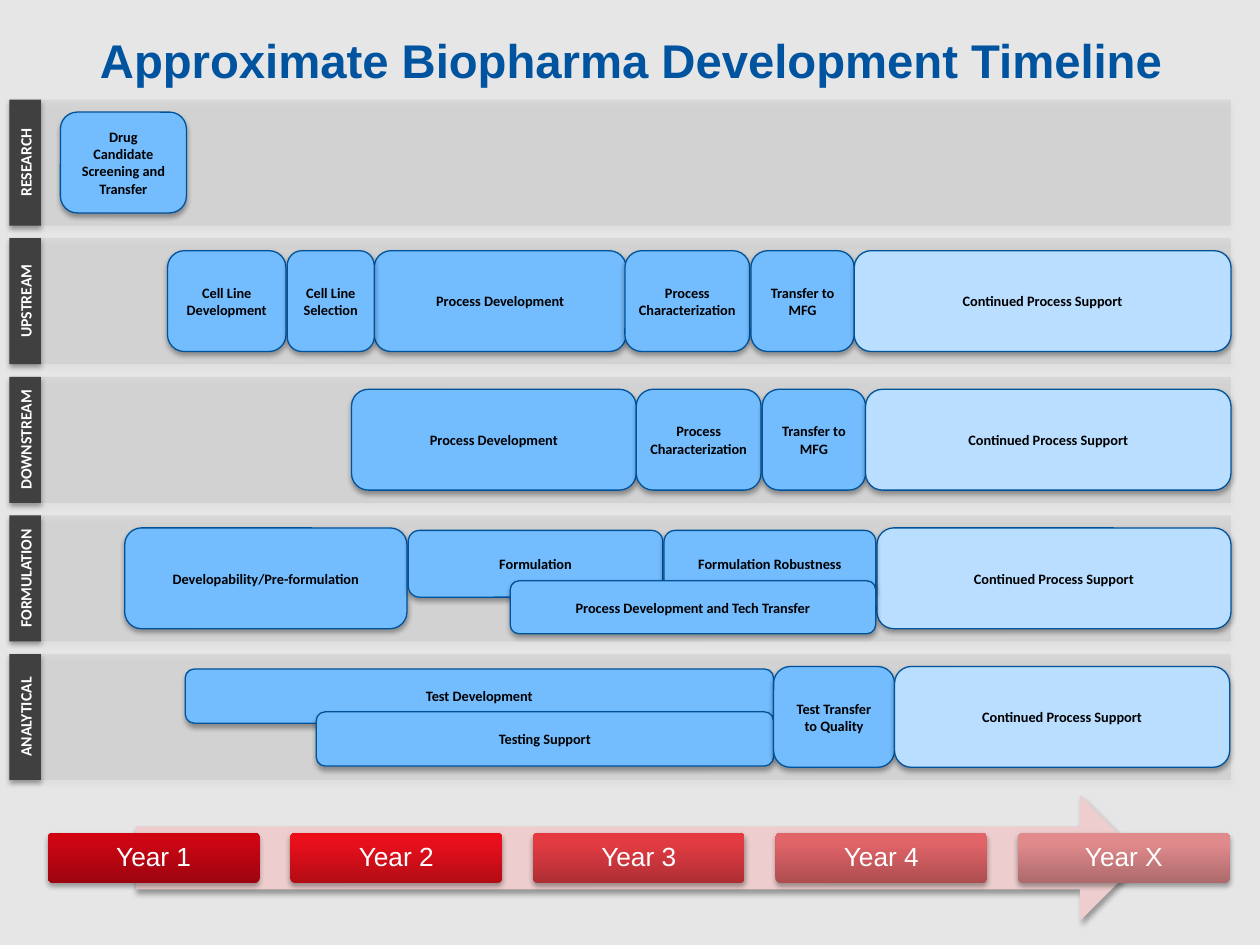
from dataclasses import dataclass
from copy import deepcopy

from pptx import Presentation
from pptx.dml.color import RGBColor
from pptx.enum.shapes import MSO_SHAPE
from pptx.enum.text import MSO_ANCHOR, PP_ALIGN
from pptx.oxml import parse_xml
from pptx.oxml.ns import nsdecls, qn
from pptx.util import Inches, Pt
from lxml.etree import SubElement


@dataclass(frozen=True)
class Theme:
    background: str = "E6E6E6"
    title: str = "00549F"
    dark: str = "404040"
    outline: str = "00529B"
    active: str = "73BDFF"
    support: str = "B9DEFF"
    arrow: str = "EDCDCD"
    black: str = "000000"
    white: str = "FFFFFF"
    title_size: float = 27
    label_size: float = 9
    step_size: float = 8.2
    year_size: float = 15
    heading_font: str = "Arial"
    step_font: str = "Calibri"


@dataclass(frozen=True)
class Step:
    """A box in a lane; drop is its distance below the lane's first line."""
    text: str
    left: float
    width: float
    drop: float = 0
    height: float = 0.8
    side_inset: float = 0.1


THEME = Theme()
SUPPORT = "Continued Process Support"
LANE_TOP, LANE_PITCH, LANE_HEIGHT = 0.79, 1.1, 1
STEP_DROP = 0.1
YEAR_LEFT, YEAR_PITCH = 0.38, 1.925

LANES = {
    "RESEARCH": [Step("Drug Candidate Screening and Transfer", 0.48, 1)],
    "UPSTREAM": [
        Step("Cell Line Development", 1.33, 0.94),
        Step("Process Development", 2.97, 2),
        Step("Cell Line Selection", 2.28, 0.69, side_inset=0),
        Step("Process Characterization", 4.96, 0.99, side_inset=0),
        Step("Transfer to MFG", 5.96, 0.82),
        Step(SUPPORT, 6.78, 2.99),
    ],
    "DOWNSTREAM": [
        Step("Process Development", 2.79, 2.26),
        Step("Process Characterization", 5.05, 0.99, side_inset=0),
        Step("Transfer to MFG", 6.05, 0.82),
        Step(SUPPORT, 6.87, 2.9),
    ],
    "FORMULATION": [
        Step("Developability/Pre-formulation", 0.99, 2.24),
        Step(SUPPORT, 6.96, 2.81),
        Step("Formulation", 3.24, 2.02, 0.02, 0.53),
        Step("Formulation Robustness", 5.27, 1.68, 0.02, 0.53),
        Step("Process Development and Tech Transfer", 4.05, 2.9, 0.42, 0.42),
    ],
    "ANALYTICAL": [
        Step("Test Development", 1.47, 4.67, 0.02, 0.43),
        Step("Testing Support", 2.51, 3.63, 0.36, 0.43),
        Step("Test Transfer to Quality", 6.14, 0.96),
        Step(SUPPORT, 7.1, 2.66),
    ],
}

# Gradient colours from the bottom of each year to its top
YEARS = {
    "Year 1": ("9C040F", "CB0513", "D00210"),
    "Year 2": ("B20C15", "E80F1C", "ED0B18"),
    "Year 3": ("AE2E33", "E23B43", "E73840"),
    "Year 4": ("AD4D50", "E06468", "E36267"),
    "Year X": ("AD6A6C", "E08A8C", "E3898B"),
}


class TimelineSlide:
    def __init__(self, deck, theme):
        self.theme = theme
        self.page = deck.slides.add_slide(deck.slide_layouts[6])
        background = self.page.background.fill
        background.solid()
        background.fore_color.rgb = RGBColor.from_string(theme.background)

    def set_text(self, box, text, font, size, color, bold=True, side_inset=0.1):
        frame = box.text_frame
        frame.word_wrap = True
        frame.margin_left = frame.margin_right = Inches(side_inset)
        para = frame.paragraphs[0]
        para.text = text
        para.alignment = PP_ALIGN.CENTER
        para.font.name = font
        para.font.size = Pt(size)
        para.font.bold = bold
        para.font.color.rgb = RGBColor.from_string(color)
        return para

    def shape(self, kind, left, top, width, height, color=None):
        """Add a shape without outline, with the soft shadow all shapes share."""
        box = self.page.shapes.add_shape(
            kind, Inches(left), Inches(top), Inches(width), Inches(height))
        if color:
            box.fill.solid()
            box.fill.fore_color.rgb = RGBColor.from_string(color)
        else:
            box.fill.gradient()
        box.line.fill.background()
        box.shadow.inherit = False
        effects = box._element.spPr.find(qn("a:effectLst"))
        effects.append(parse_xml(
            f'<a:outerShdw {nsdecls("a")} blurRad="{Pt(3.1)}" dist="{Pt(1.8)}"'
            ' dir="5400000" rotWithShape="0"><a:srgbClr val="000000">'
            '<a:alpha val="35000"/></a:srgbClr></a:outerShdw>'))
        return box

    def upright(self, center_x, center_y, length, thickness):
        """Add a dark rectangle turned a quarter to the left."""
        box = self.shape(
            MSO_SHAPE.RECTANGLE, center_x - length / 2,
            center_y - thickness / 2, length, thickness, self.theme.dark)
        box.rotation = 270
        return box

    def title(self, text):
        box = self.page.shapes.add_textbox(
            Inches(0.51), Inches(0.2), Inches(9), Inches(1.25))
        box.text_frame.vertical_anchor = MSO_ANCHOR.TOP
        self.set_text(box, text, self.theme.heading_font,
                      self.theme.title_size, self.theme.title)

    def band(self, center_y):
        box = self.upright(4.92, center_y, LANE_HEIGHT, 9.7)
        color = box._element.spPr.find(qn("a:solidFill"))[0]
        SubElement(color, qn("a:alpha")).set("val", "8000")

    def label(self, text, center_y):
        box = self.upright(0.2, center_y, LANE_HEIGHT, 0.25)
        self.set_text(box, text, self.theme.step_font,
                      self.theme.label_size, self.theme.white)

    def step(self, step, lane_top):
        color = self.theme.support if step.text == SUPPORT else self.theme.active
        box = self.shape(
            MSO_SHAPE.ROUNDED_RECTANGLE, step.left,
            lane_top + STEP_DROP + step.drop, step.width, step.height, color)
        box.line.color.rgb = RGBColor.from_string(self.theme.outline)
        box.line.width = Pt(0.75)
        self.set_text(box, step.text, self.theme.step_font, self.theme.step_size,
                      self.theme.black, side_inset=step.side_inset)

    def arrow(self):
        self.shape(MSO_SHAPE.RIGHT_ARROW, 1.08, 6.31, 7.99, 1, self.theme.arrow)

    def year(self, text, left, colors):
        box = self.shape(MSO_SHAPE.ROUNDED_RECTANGLE, left, 6.61, 1.68, 0.4)
        box.adjustments[0] = 0.1
        box.fill.gradient_angle = 90
        stop_list = box._element.spPr.find(qn("a:gradFill")).find(qn("a:gsLst"))
        stop_list.append(deepcopy(stop_list[0]))
        for stop, position, color in zip(
                box.fill.gradient_stops, (0, 0.8, 1), colors):
            stop.position = position
            stop.color.rgb = RGBColor.from_string(color)
        para = self.set_text(box, text, self.theme.heading_font,
                             self.theme.year_size, self.theme.white, bold=False)
        para.line_spacing = 0.9


def main():
    deck = Presentation()
    deck.slide_width, deck.slide_height = Inches(10), Inches(7.5)
    slide = TimelineSlide(deck, THEME)
    slide.title("Approximate Biopharma Development Timeline")
    for index, (name, steps) in enumerate(LANES.items()):
        top = LANE_TOP + index * LANE_PITCH
        center_y = top + LANE_HEIGHT / 2
        slide.band(center_y)
        slide.label(name, center_y)
        for step in steps:
            slide.step(step, top)
    slide.arrow()
    for index, (name, colors) in enumerate(YEARS.items()):
        slide.year(name, YEAR_LEFT + index * YEAR_PITCH, colors)
    deck.save("out.pptx")


if __name__ == "__main__":
    main()
